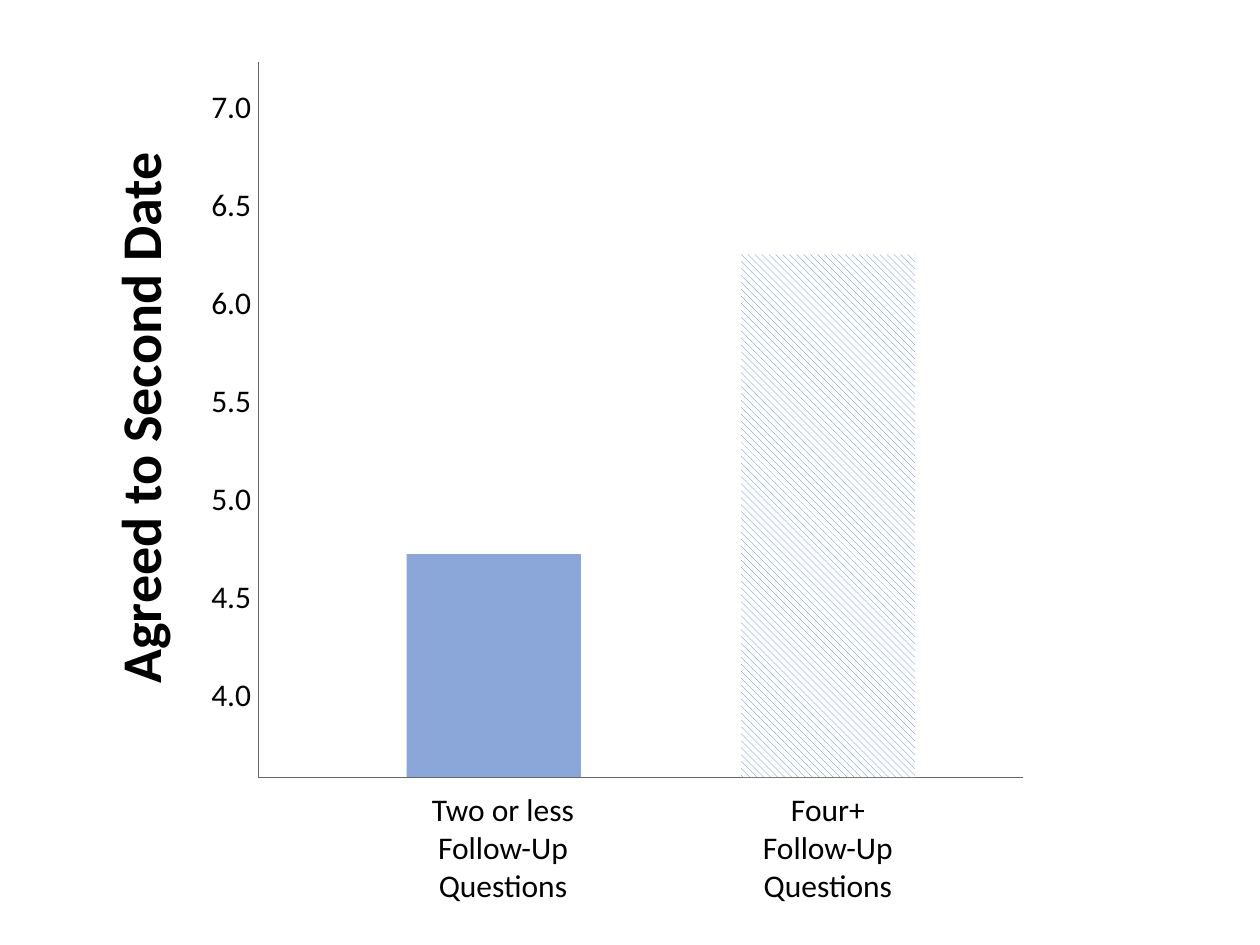
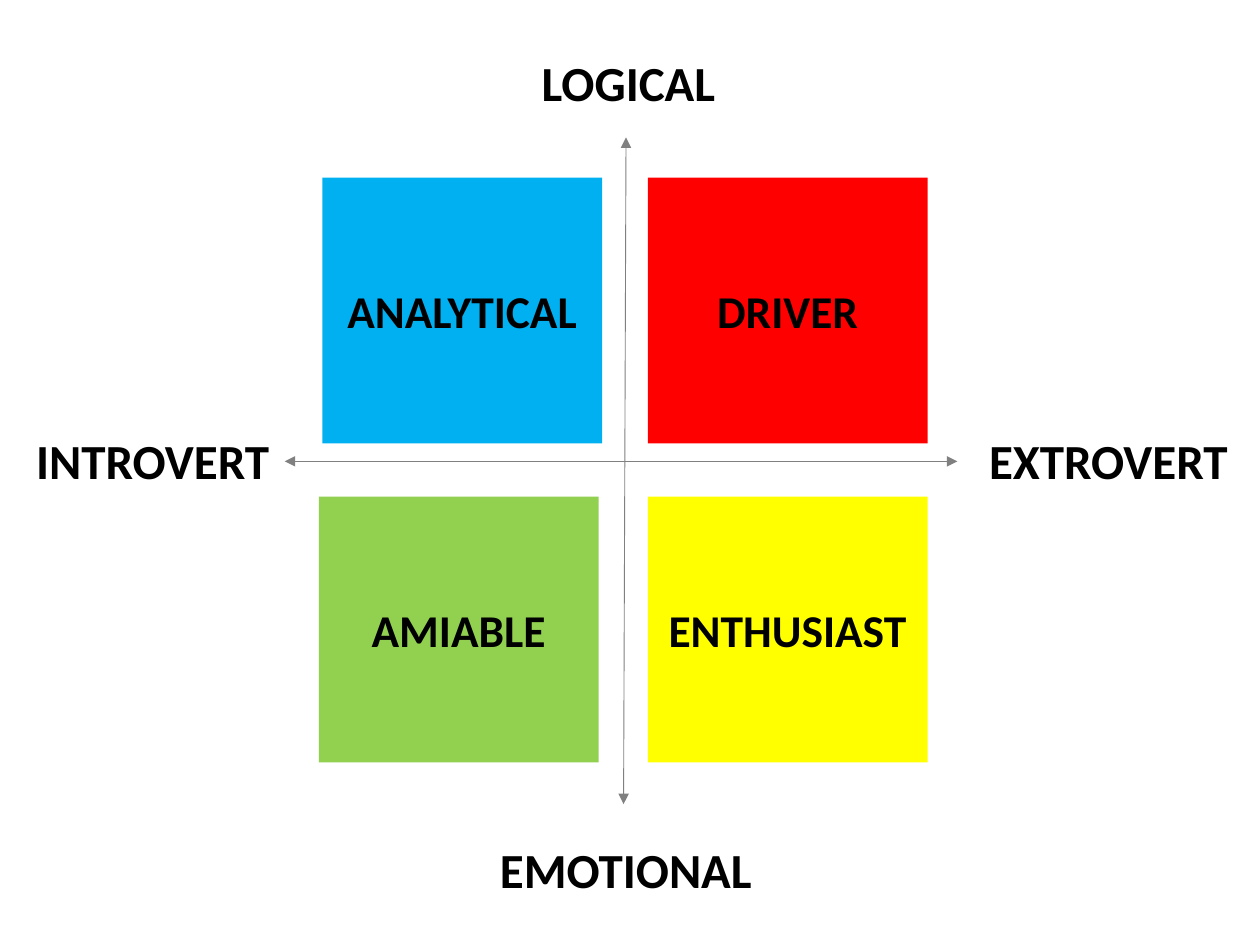
import pptx
import pptx.dml.color
import pptx.enum.dml
import pptx.enum.shapes
import pptx.enum.text
import pptx.oxml
import pptx.oxml.ns
import pptx.util
from pptx.util import Cm, Pt

FONT = "Calibri"
COLORS = {
    "text": "000000",
    "paper": "FFFFFF",
    "bar": "4472C4",
    "axis": "666666",
    "arrow": "808080",
    "analytical": "00B0F0",
    "driver": "FF0000",
    "amiable": "92D050",
    "enthusiast": "FFFF00",
}
ALIGN = pptx.enum.text.PP_ALIGN


def rgb(name):
    return pptx.dml.color.RGBColor.from_string(COLORS[name])


def add_child(parent, tag, **attrs):
    child = pptx.oxml.parse_xml(f"<a:{tag} {pptx.oxml.ns.nsdecls('a')}/>")
    for key, value in attrs.items():
        child.set(key, value)
    parent.append(child)


def write(tf, lines, size, bold=False, align=ALIGN.LEFT):
    tf.text = "\n".join(lines)
    for p in tf.paragraphs:
        p.alignment = align
        p.font.name = FONT
        p.font.size = Pt(size)
        p.font.bold = bold
        p.font.color.rgb = rgb("text")


def add_text(slide, x, y, w, h, lines, size, bold=False, align=ALIGN.LEFT, wrap=True):
    sp = slide.shapes.add_textbox(Cm(x), Cm(y), Cm(w), Cm(h))
    tf = sp.text_frame
    tf.word_wrap = wrap
    tf.auto_size = pptx.enum.text.MSO_AUTO_SIZE.SHAPE_TO_FIT_TEXT
    write(tf, lines, size, bold, align)
    return sp


def add_rect(slide, x, y, w, h, color):
    sp = slide.shapes.add_shape(
        pptx.enum.shapes.MSO_SHAPE.RECTANGLE, Cm(x), Cm(y), Cm(w), Cm(h))
    sp.shadow.inherit = False
    sp.fill.solid()
    sp.fill.fore_color.rgb = rgb(color)
    sp.line.fill.background()
    return sp


def add_line(slide, x1, y1, x2, y2, color, arrows=False):
    line = slide.shapes.add_connector(
        pptx.enum.shapes.MSO_CONNECTOR.STRAIGHT, Cm(x1), Cm(y1), Cm(x2), Cm(y2))
    line.line.color.rgb = rgb(color)
    line.line.width = Pt(0.5)
    if arrows:
        for end in ("headEnd", "tailEnd"):
            add_child(line.line._get_or_add_ln(), end, type="triangle")
    add_child(line._element.spPr, "effectLst")


def add_axes(slide, x, y, w, h):
    add_line(slide, x, y, x, y + h, "axis")
    add_line(slide, x + w, y + h, x, y + h, "axis")

    title_w, title_h = 12.06, 1.63
    title = add_text(slide, x - 2.4 - title_w / 2, y + 6.76 - title_h / 2,
                     title_w, title_h, ["Agreed to Second Date"], 32, bold=True)
    title.rotation = 270

    values = [f"{7 - step / 2:.1f}" for step in range(7)]
    ticks = add_text(slide, x - 1.2, y + 0.16, 1.98, 14.15, values, 18)
    for p in ticks.text_frame.paragraphs:
        p.line_spacing = Pt(28)
        p.space_after = Pt(28)


def add_bars(slide, x, y, w, h):
    bar_w, label_w = 3.51, 4.98
    bottom = y + h
    few = add_rect(slide, x + 2.99, bottom - 4.5, bar_w, 4.5, "bar")
    color = few._element.spPr.find(".//" + pptx.oxml.ns.qn("a:srgbClr"))
    add_child(color, "alpha", val="62000")

    many = add_rect(slide, x + 9.73, bottom - 10.54, bar_w, 10.54, "bar")
    many.fill.patterned()
    many.fill.pattern = pptx.enum.dml.MSO_PATTERN.WIDE_DOWNWARD_DIAGONAL
    many.fill.fore_color.rgb = rgb("bar")
    many.fill.back_color.rgb = rgb("paper")

    labels = [
        (2.44, ["Two or less", "Follow-Up Questions"]),
        (8.99, ["Four+", "Follow-Up", "Questions"]),
    ]
    for dx, lines in labels:
        add_text(slide, x + dx, bottom + 0.13, label_w, 2.57, lines, 18,
                 align=ALIGN.CENTER)


def build_bar_slide(slide):
    plot = (5.21, 1.24, 15.42, 14.43)
    add_axes(slide, *plot)
    add_bars(slide, *plot)


def add_poles(slide, x, y, w, h):
    poles = [
        ("INTROVERT", -5.26, 5.79, 5.26),
        ("EXTROVERT", w + 0.39, 5.79, 5.36),
        ("LOGICAL", 4.93, -1.83, 4.06),
        ("EMOTIONAL", 4.09, h + 0.58, 5.64),
    ]
    for name, dx, dy, label_w in poles:
        add_text(slide, x + dx, y + dy, label_w, 1.45, [name], 28, bold=True, wrap=False)


def add_quadrants(slide, x, y, w, h):
    tile_w, tile_h = 5.64, 5.36
    top, low = y + 0.81, y + 7.24
    tiles = [
        ("driver", x + 7.32, top),
        ("enthusiast", x + 7.32, low),
        ("amiable", x + 0.69, low),
        ("analytical", x + 0.76, top),
    ]
    add_line(slide, x + 6.88, y, x + 6.83, y + h, "arrow", arrows=True)
    for name, left, tile_top in tiles:
        sp = add_rect(slide, left, tile_top, tile_w, tile_h, name)
        sp.text_frame.vertical_anchor = pptx.enum.text.MSO_ANCHOR.MIDDLE
        write(sp.text_frame, [name.upper()], 26, bold=True, align=ALIGN.CENTER)
    add_line(slide, x, y + 6.53, x + w, y + 6.53, "arrow", arrows=True)


def build_matrix_slide(slide):
    matrix = (5.74, 2.77, 13.56, 13.44)
    add_poles(slide, *matrix)
    add_quadrants(slide, *matrix)


def main():
    prs = pptx.Presentation()
    prs.slide_width = Cm(25.4)
    prs.slide_height = Cm(19.05)
    for build in (build_bar_slide, build_matrix_slide):
        build(prs.slides.add_slide(prs.slide_layouts[6]))
    prs.save("out.pptx")


if __name__ == "__main__":
    main()
